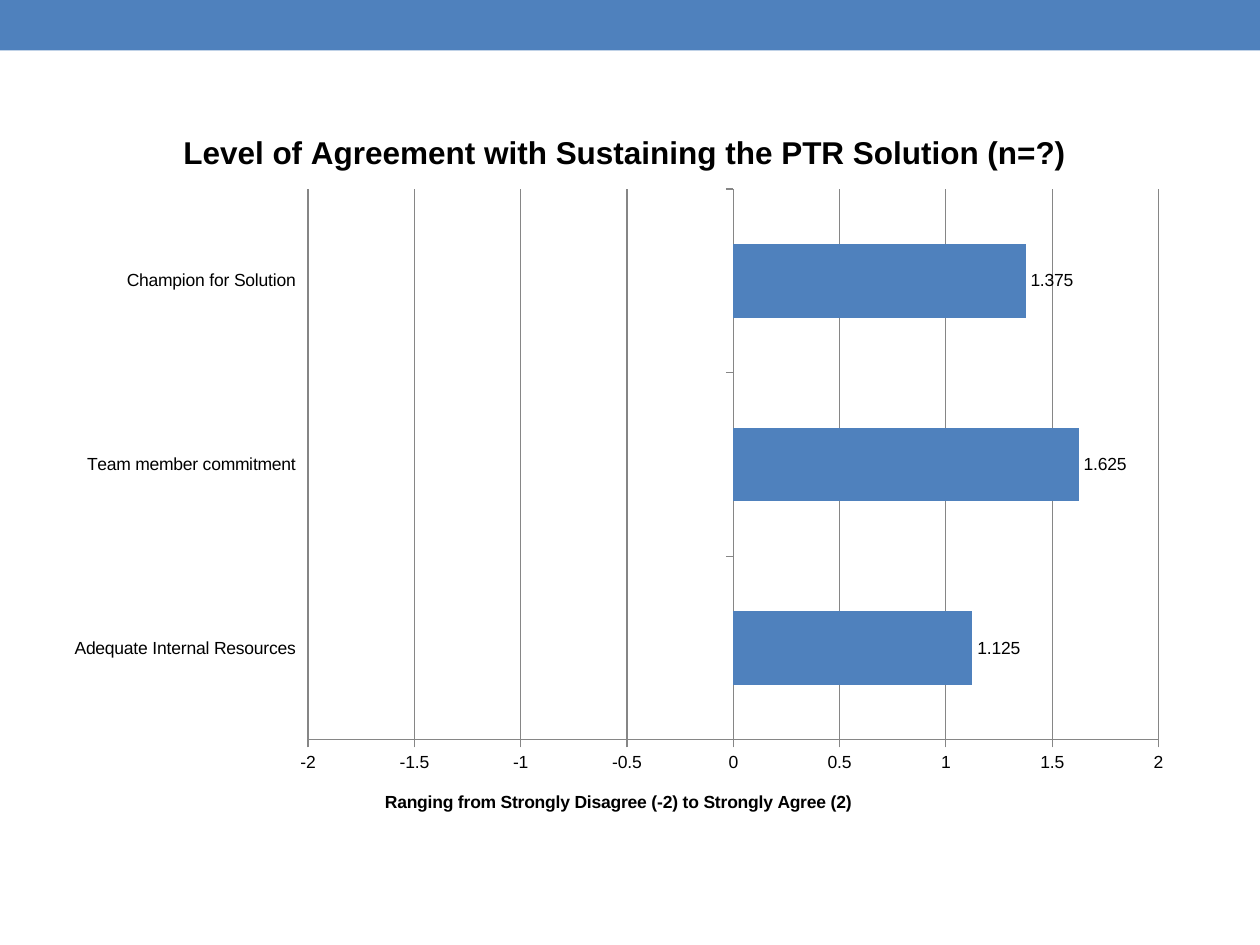
from dataclasses import dataclass

from lxml.etree import SubElement
from pptx import Presentation
from pptx.chart.data import CategoryChartData
from pptx.dml.color import RGBColor
from pptx.enum.chart import XL_CHART_TYPE, XL_LABEL_POSITION, XL_TICK_LABEL_POSITION, XL_TICK_MARK
from pptx.enum.shapes import MSO_SHAPE
from pptx.oxml.ns import qn
from pptx.util import Inches, Pt

BLUE, BLACK, GRAY = "4F81BD", "000000", "868686"


@dataclass
class Answer:
    label: str
    score: float


ANSWERS = [
    Answer("Adequate Internal Resources", 1.125),
    Answer("Team member commitment", 1.625),
    Answer("Champion for Solution", 1.375),
]


def paint(color_format, color: str) -> None:
    color_format.rgb = RGBColor.from_string(color)


def style_font(font, size: int, bold: bool = False) -> None:
    font.name = "Arial"
    font.size = Pt(size)
    font.bold = bold
    paint(font.color, BLACK)


def style_line(line, color: str = GRAY) -> None:
    paint(line.color, color)
    line.width = Pt(0.75)


def place(element, index: int, **settings) -> None:
    """Give a chart part a manual layout, in fractions of the chart."""
    for old in element.findall(qn("c:layout")):
        element.remove(old)
    layout = SubElement(element, qn("c:layout"))
    element.insert(index, layout)
    manual = SubElement(layout, qn("c:manualLayout"))
    for name, value in settings.items():
        SubElement(manual, qn(f"c:{name}")).set("val", str(value))


def write_title(title, text: str, size: int, left: float, top: float) -> None:
    title.text_frame.text = text
    style_font(title.text_frame.paragraphs[0].runs[0].font, size, bold=True)
    place(title._element, 1, xMode="edge", yMode="edge", x=left, y=top)


def style_axis(axis) -> None:
    axis.tick_label_position = XL_TICK_LABEL_POSITION.LOW
    axis.major_tick_mark = XL_TICK_MARK.OUTSIDE
    axis.minor_tick_mark = XL_TICK_MARK.NONE
    style_font(axis.tick_labels.font, 10)
    style_line(axis.format.line)


def add_band(page) -> None:
    band = page.shapes.add_shape(MSO_SHAPE.RECTANGLE, 0, 0, Inches(10), Inches(0.4))
    band.shadow.inherit = False
    band.fill.solid()
    paint(band.fill.fore_color, BLUE)
    band.line.fill.background()


def add_agreement_chart(page) -> None:
    data = CategoryChartData(number_format="General")
    data.categories = [answer.label for answer in ANSWERS]
    data.add_series("Series 1", [answer.score for answer in ANSWERS])
    chart = page.shapes.add_chart(
        XL_CHART_TYPE.BAR_CLUSTERED,
        Inches(0.42), Inches(0.83), Inches(9), Inches(5.83), data,
    ).chart
    style_font(chart.font, 10)
    chart.has_legend = False

    # Titles
    chart.has_title = True
    write_title(chart.chart_title,
                "Level of Agreement with Sustaining the PTR Solution (n=?)", 18, 0.11, 0.03)
    scale = chart.value_axis
    scale.has_title = True
    write_title(scale.axis_title,
                "Ranging from Strongly Disagree (-2) to Strongly Agree (2)", 10, 0.29, 0.93)

    # Axes and gridlines
    style_axis(chart.category_axis)
    style_axis(scale)
    scale.minimum_scale, scale.maximum_scale, scale.major_unit = -2, 2, 0.5
    scale.has_major_gridlines = True
    style_line(scale.major_gridlines.format.line)
    place(chart._chartSpace.chart.plotArea, 0, layoutTarget="inner",
          xMode="edge", yMode="edge", x=0.225, y=0.115, w=0.75, h=0.75)

    # Bars and their values
    plot = chart.plots[0]
    plot.gap_width = 150
    plot.vary_by_categories = False
    bars = plot.series[0]
    bars.invert_if_negative = False
    bars.format.fill.solid()
    paint(bars.format.fill.fore_color, BLUE)
    labels = bars.data_labels
    labels.show_value = True
    labels.position = XL_LABEL_POSITION.OUTSIDE_END
    style_font(labels.font, 10)


def main() -> None:
    deck = Presentation()
    deck.slide_width, deck.slide_height = Inches(10), Inches(7.5)
    page = deck.slides.add_slide(deck.slide_layouts[6])
    add_band(page)
    add_agreement_chart(page)
    deck.save("out.pptx")


if __name__ == "__main__":
    main()
